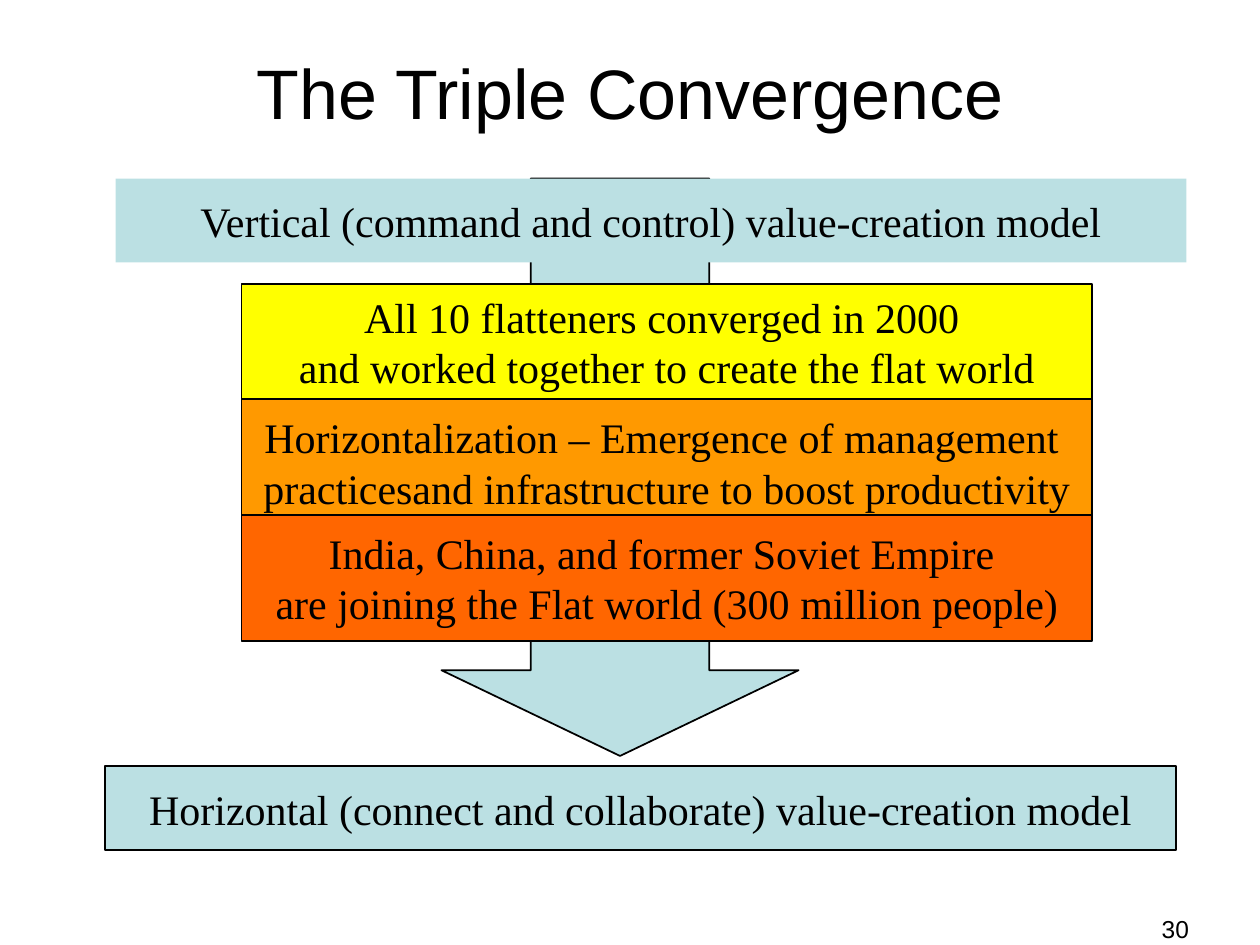
from pptx import Presentation
from pptx.dml.color import RGBColor
from pptx.enum.shapes import MSO_SHAPE
from pptx.enum.text import MSO_ANCHOR, PP_ALIGN
from pptx.util import Cm, Pt

RECTANGLE, DOWN_ARROW = MSO_SHAPE.RECTANGLE, MSO_SHAPE.DOWN_ARROW
TOP, MIDDLE = MSO_ANCHOR.TOP, MSO_ANCHOR.MIDDLE
CENTER, RIGHT = PP_ALIGN.CENTER, PP_ALIGN.RIGHT
BLACK = RGBColor(0x00, 0x00, 0x00)
PALE_TEAL = RGBColor(0xBB, 0xE0, 0xE3)
YELLOW = RGBColor(0xFF, 0xFF, 0x00)
AMBER = RGBColor(0xFF, 0x99, 0x00)
ORANGE = RGBColor(0xFF, 0x66, 0x00)

TITLE = "The Triple Convergence"
PAGE_NUMBER = "30"
MODELS = [
    ("Vertical (command and control) value-creation model", 2.33, 3.6, False),
    ("Horizontal (connect and collaborate) value-creation model", 2.12, 15.45, True),
]
CONVERGENCES = [
    (["All 10 flatteners converged in 2000 ",
      "and worked together to create the flat world"], YELLOW, 2.33),
    (["Horizontalization – Emergence of management ",
      "practicesand infrastructure to boost productivity"], AMBER, 2.54),
    (["India, China, and former Soviet Empire ",
      "are joining the Flat world (300 million people)"], ORANGE, 2.54),
]
MODEL_WIDTH, MODEL_HEIGHT = 21.59, 1.69
STACK_LEFT, STACK_TOP, STACK_WIDTH, STACK_STEP = 4.87, 5.72, 17.15, 2.33


def write(box, lines, font, size, align=CENTER, anchor=MIDDLE, wrap=True):
    frame = box.text_frame
    frame.word_wrap = wrap
    frame.vertical_anchor = anchor
    for index, line in enumerate(lines):
        para = frame.paragraphs[0] if index == 0 else frame.add_paragraph()
        para.alignment = align
        span = para.add_run()
        span.text = line
        span.font.name = font
        span.font.size = Pt(size)
        span.font.color.rgb = BLACK


def add_block(page, kind, place, fill, outlined=True):
    block = page.shapes.add_shape(kind, *map(Cm, place))
    block.shadow.inherit = False
    block.fill.solid()
    block.fill.fore_color.rgb = fill
    if outlined:
        block.line.color.rgb = BLACK
        block.line.width = Pt(1)
    else:
        block.line.fill.background()
    return block


def add_label(page, place, lines, fill, outlined=True):
    block = add_block(page, RECTANGLE, place, fill, outlined)
    write(block, lines, "Times New Roman", 24, wrap=False)


def main():
    deck = Presentation()
    deck.slide_width, deck.slide_height = Cm(25.4), Cm(19.05)
    page = deck.slides.add_slide(deck.slide_layouts[6])

    title = page.shapes.add_textbox(Cm(1.27), Cm(0.76), Cm(22.86), Cm(2.16))
    write(title, [TITLE], "Arial", 40)

    arrow = add_block(page, DOWN_ARROW, (8.9, 3.6, 7.2, 11.64), PALE_TEAL)
    arrow.adjustments[0] = 0.5
    arrow.adjustments[1] = 0.24

    for text, left, top, outlined in MODELS:
        add_label(page, (left, top, MODEL_WIDTH, MODEL_HEIGHT), [text], PALE_TEAL, outlined)

    for index, (lines, fill, height) in enumerate(CONVERGENCES):
        top = STACK_TOP + index * STACK_STEP
        add_label(page, (STACK_LEFT, top, STACK_WIDTH, height), lines, fill)

    number = page.shapes.add_textbox(Cm(18.29), Cm(18.31), Cm(5.93), Cm(0.74))
    write(number, [PAGE_NUMBER], "Arial", 14, RIGHT, TOP)

    deck.save("out.pptx")


if __name__ == "__main__":
    main()
